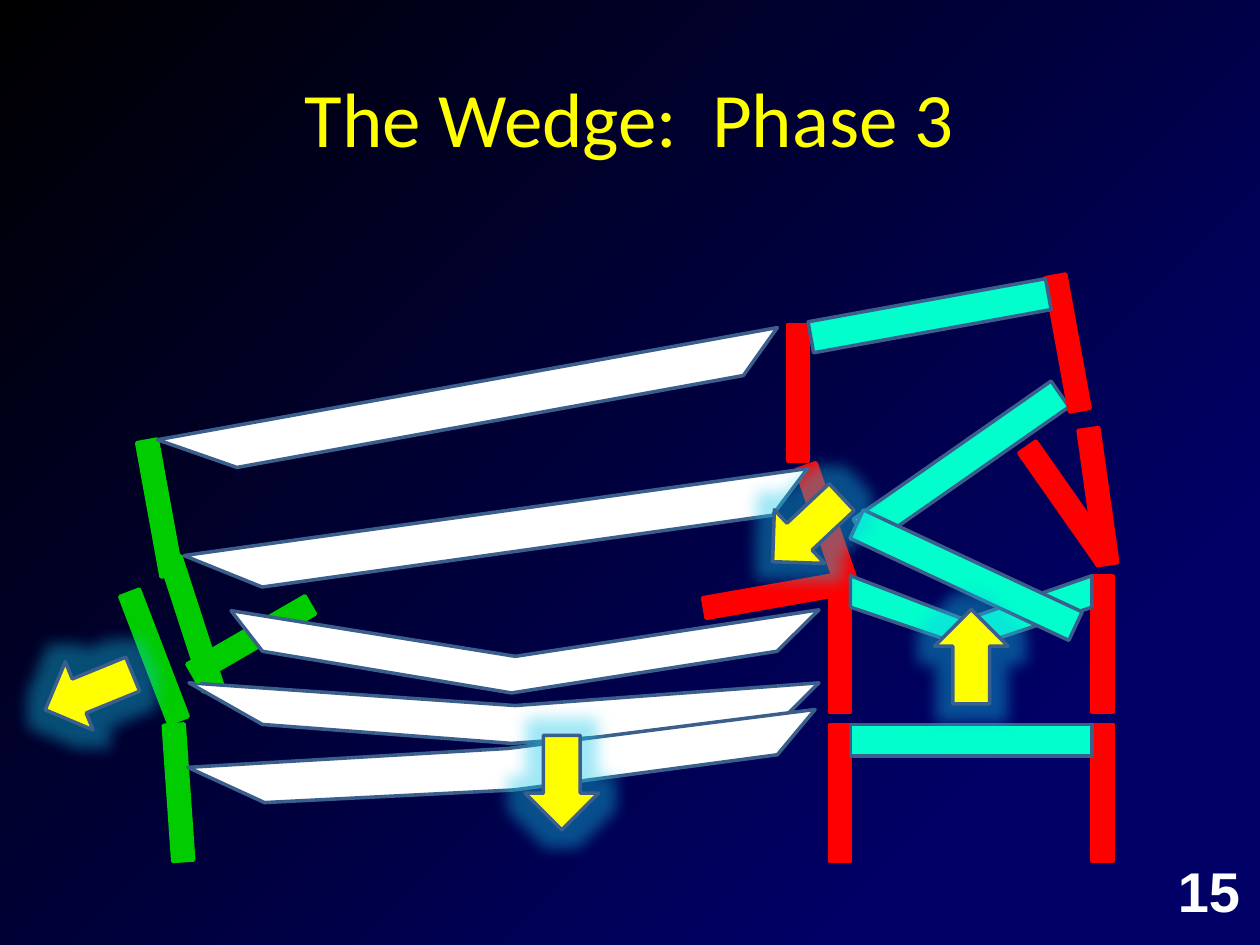
from lxml import etree
from pptx import Presentation
from pptx.dml.color import RGBColor
from pptx.enum import shapes, text
from pptx.oxml.ns import qn
from pptx.util import Pt

COLOURS = {
    "black": "000000", "navy": "000066", "white": "FFFFFF", "yellow": "FFFF00",
    "green": "00CC00", "red": "FF0000", "mint": "00FFCC", "edge": "3A5F8C",
    "glow": "14C6EA",
}
COLUMN_SIZE = (12, 78)
GIRDER_SIZE = (138, 18)
ARROW_SIZE = (54, 42)

# Each storey: green, middle and right columns and girder as (x, y, rotation),
# or the girder as an outline when bent; the slab is always an outline.
STOREYS = [
    {"columns": [(31.7, 173.5, 342), (395.3, 120.2, 341), (549.4, 100.8, 352)],
     "girder": (408.2, 111.6, 325.1),
     "slab": [(33.1, 173.5), (77.8, 191.5), (369.4, 150.5), (389.5, 123.8)]},
    {"columns": [(10, 192.2, 339), (402, 185, 0), (552, 185, 0)],
     "girder": [(414, 185), (479.5, 210.2), (552, 185), (552, 203),
                (482.4, 226.1), (414, 203)],
     "slab": [(36, 246.2), (78, 270), (220.3, 280.8), (372, 270),
              (396, 246.2), (222.5, 259.2)]},
    {"columns": [(65.5, 182.2, 60), (362.9, 157.7, 260), (531.4, 104.4, 325)],
     "girder": (411.1, 175.7, 25),
     "slab": [(60, 205), (78, 228.2), (220.3, 252), (372, 228.2),
              (396, 204.5), (222.5, 231.1)]},
    {"columns": [(13, 107.3, 349.7), (378, 41.8, 0), (532.1, 13, 349.7)],
     "girder": (390.2, 27.4, 349.7),
     "slab": [(18, 107.3), (63.4, 123.1), (352.8, 70.6), (372.2, 43.2)]},
    {"columns": [(24, 270, 356), (402, 270, 0), (552, 270, 0)],
     "girder": (414, 270, 0),
     "slab": [(35.3, 294.5), (79.2, 314.6), (221.8, 307.4), (372.2, 287.3),
              (393.8, 261.4), (218.2, 283.7)]},
]
ARROWS = [(-48.2, 230.4, 157.8), (362.2, 137.5, 136.9), (456, 210.2, 270),
          (222, 282.2, 90)]


def colour(name):
    return RGBColor.from_string(COLOURS[name])


def paint(shape, fill, line="edge"):
    shape.shadow.inherit = False
    shape.fill.solid()
    shape.fill.fore_color.rgb = colour(fill)
    shape.line.color.rgb = colour(line)
    shape.line.width = Pt(2)
    return shape


def add_part(slide, box, kind, place, size, fill, line="edge"):
    x, y, rotation = place
    shape = slide.shapes.add_shape(
        kind, Pt(box[0] + x), Pt(box[1] + y), Pt(size[0]), Pt(size[1]))
    shape.rotation = rotation
    return paint(shape, fill, line)


def add_outline(slide, box, points, fill):
    corners = [(Pt(box[0] + x), Pt(box[1] + y)) for x, y in points]
    builder = slide.shapes.build_freeform(*corners[0])
    builder.add_line_segments(corners[1:], close=True)
    return paint(builder.convert_to_shape(), fill)


def add_glow(shape, radius):
    effects = shape._element.spPr.find(qn("a:effectLst"))
    glow = etree.SubElement(effects, qn("a:glow"), rad=str(Pt(radius)))
    tint = etree.SubElement(glow, qn("a:srgbClr"), val=COLOURS["glow"])
    etree.SubElement(tint, qn("a:alpha"), val="40000")


def add_storey(slide, box, storey):
    rectangle = shapes.MSO_SHAPE.RECTANGLE
    for place, name in zip(storey["columns"], ("green", "red", "red")):
        column = add_part(slide, box, rectangle, place, COLUMN_SIZE, name, name)
        etree.SubElement(column.line._get_or_add_ln(), qn("a:round"))
    if isinstance(storey["girder"], list):
        add_outline(slide, box, storey["girder"], "mint")
    else:
        add_part(slide, box, rectangle, storey["girder"], GIRDER_SIZE, "mint")
    add_outline(slide, box, storey["slab"], "white")


def add_building(slide, box):
    for storey in STOREYS:
        add_storey(slide, box, storey)
    # Directions of movement
    for place in ARROWS:
        arrow = add_part(slide, box, shapes.MSO_SHAPE.RIGHT_ARROW, place,
                         ARROW_SIZE, "yellow")
        add_glow(arrow, 18)


def add_label(slide, box, words, font, size, name, bold=False, wrap=True,
              align=text.PP_ALIGN.LEFT, anchor=text.MSO_ANCHOR.TOP):
    frame = slide.shapes.add_textbox(*[Pt(length) for length in box]).text_frame
    frame.word_wrap = wrap
    frame.vertical_anchor = anchor
    frame.text = words
    paragraph = frame.paragraphs[0]
    paragraph.alignment = align
    run_font = paragraph.runs[0].font
    run_font.name, run_font.size, run_font.bold = font, Pt(size), bold
    run_font.color.rgb = colour(name)


def set_background(slide):
    fill = slide.background.fill
    fill.gradient()
    fill.gradient_angle = 315
    for stop, name, position in zip(fill.gradient_stops, ("black", "navy"), (0, 0.81)):
        stop.color.rgb = colour(name)
        stop.position = position


def main():
    presentation = Presentation()
    presentation.slide_width, presentation.slide_height = Pt(720), Pt(540)
    slide = presentation.slides.add_slide(presentation.slide_layouts[6])
    set_background(slide)
    # Title
    add_label(slide, (36, 21.6, 648, 90), "The Wedge:  Phase 3", "Calibri", 44,
              "yellow", align=text.PP_ALIGN.CENTER, anchor=text.MSO_ANCHOR.MIDDLE)
    # Collapsing building
    add_building(slide, (72, 144))
    # Slide number
    add_label(slide, (666, 486, 66, 46), "15", "Arial", 32, "white", bold=True)
    presentation.save("out.pptx")


if __name__ == "__main__":
    main()
